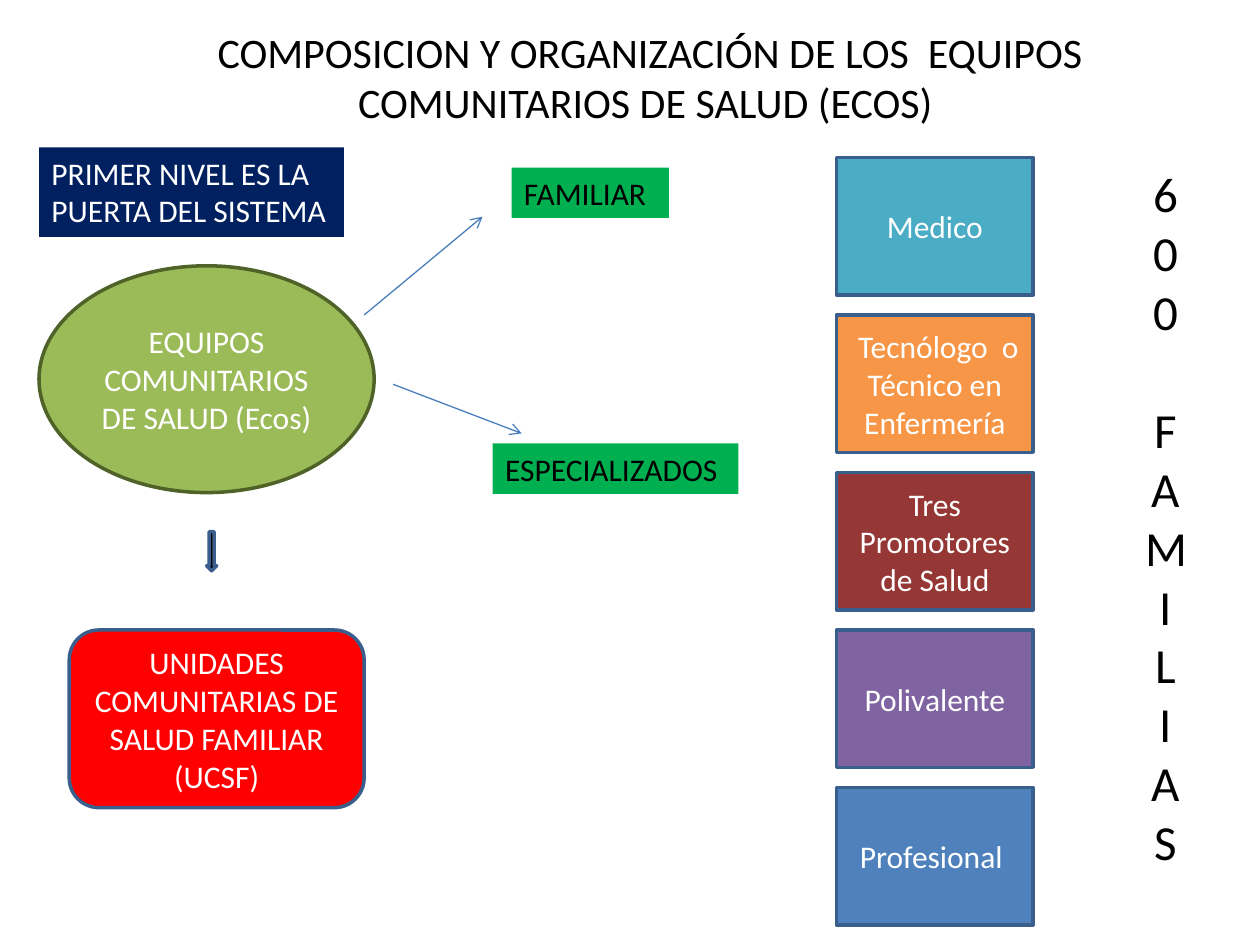
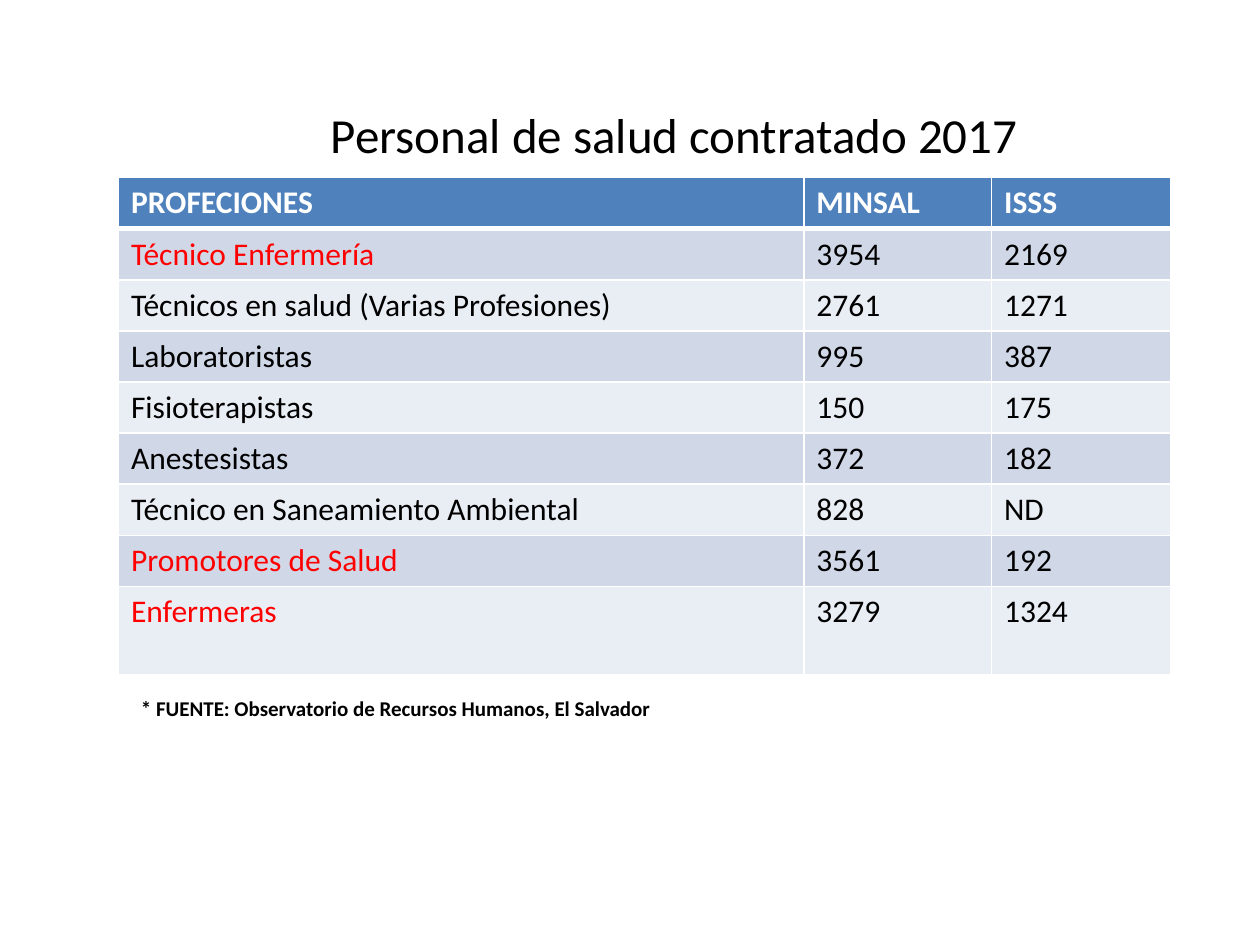
"""Build two slides on community health teams and contracted health staff."""
from dataclasses import dataclass
from typing import Any, NamedTuple, Optional

from lxml import etree
from pptx import Presentation
from pptx.dml.color import RGBColor
from pptx.enum.shapes import MSO_CONNECTOR, MSO_SHAPE
from pptx.enum.text import MSO_ANCHOR, MSO_AUTO_SIZE, PP_ALIGN
from pptx.oxml.ns import qn
from pptx.util import Inches, Pt

RECTANGLE = MSO_SHAPE.RECTANGLE
ELLIPSE = MSO_SHAPE.OVAL
ROUNDED = MSO_SHAPE.FLOWCHART_ALTERNATE_PROCESS
DOWN_ARROW = MSO_SHAPE.DOWN_ARROW
STRAIGHT = MSO_CONNECTOR.STRAIGHT
TOP, MIDDLE = MSO_ANCHOR.TOP, MSO_ANCHOR.MIDDLE
LEFT, CENTER = PP_ALIGN.LEFT, PP_ALIGN.CENTER
NO_AUTOFIT = MSO_AUTO_SIZE.NONE

FONT = "Calibri"
WHITE, BLACK, RED = "FFFFFF", "000000", "FF0000"
BLUE, OUTLINE, ARROW = "4F81BD", "3A5F8C", "4B7EBC"
GREEN, NAVY = "00B050", "002060"
OLIVE, DARK_OLIVE = "9BBB59", "4F6228"
BANDS = ("D0D8E8", "E9EDF4")
TITLE_ONLY = 5


class Area(NamedTuple):
    """Left, top, width and height in inches."""
    left: float
    top: float
    width: float
    height: float


@dataclass(frozen=True)
class TextStyle:
    """Look of the text in one element."""
    size: float = 18
    color: str = BLACK
    bold: bool = False
    align: Any = LEFT
    anchor: Any = TOP


@dataclass(frozen=True)
class Panel:
    """A filled and outlined shape with centred white text."""
    text: str
    area: Area
    fill: str
    shape: Any = RECTANGLE
    outline: str = OUTLINE


@dataclass(frozen=True)
class Label:
    """A text box, filled when a fill is given."""
    text: str
    area: Area
    style: TextStyle
    fill: Optional[str] = None


class Staff(NamedTuple):
    """One profession with its head counts."""
    profession: str
    minsal: str
    isss: str
    highlighted: bool = False


PANEL_TEXT = TextStyle(color=WHITE, align=CENTER, anchor=MIDDLE)
LABEL_TEXT = TextStyle()

PANELS = (
    Panel("EQUIPOS COMUNITARIOS DE SALUD (Ecos)", Area(0.31, 2.11, 2.66, 1.8), OLIVE, ELLIPSE, DARK_OLIVE),
    Panel("UNIDADES COMUNITARIAS DE SALUD FAMILIAR (UCSF)", Area(0.55, 5, 2.34, 1.41), RED, ROUNDED),
    Panel("", Area(1.64, 4.22, 0.08, 0.31), BLACK, DOWN_ARROW),
)
LABELS = (
    Label("FAMILIAR", Area(4.06, 1.33, 1.25, 0.4), LABEL_TEXT, GREEN),
    Label("ESPECIALIZADOS", Area(3.91, 3.52, 1.95, 0.4), LABEL_TEXT, GREEN),
    Label("PRIMER NIVEL ES LA PUERTA DEL SISTEMA", Area(0.31, 1.17, 2.42, 0.71), TextStyle(color=WHITE), NAVY),
)
TEAM_ARROWS = (((2.89, 2.5), (3.83, 1.72)), ((3.12, 3.05), (4.14, 3.44)))
TEAM_MEMBERS = (
    ("Medico", "4BACC6"),
    (" Tecnólogo  o Técnico en Enfermería", "F79646"),
    ("Tres Promotores de Salud", "953735"),
    ("Polivalente", "8064A2"),
    ("Profesional ", BLUE),
)
MEMBER_PITCH = 1.25
FAMILY_COUNT, FAMILY_WORD = "600", "FAMILIAS"

STAFF_HEADINGS = ("PROFECIONES", "MINSAL", "ISSS")
STAFF = (
    Staff("Técnico Enfermería", "3954", "2169", True),
    Staff("Técnicos en salud (Varias Profesiones)", "2761", "1271"),
    Staff("Laboratoristas", "995", "387"),
    Staff("Fisioterapistas", "150", "175"),
    Staff("Anestesistas", "372", "182"),
    Staff("Técnico en Saneamiento Ambiental", "828", "ND"),
    Staff("Promotores de Salud", "3561", "192", True),
    Staff("Enfermeras", "3279", "1324", True),
)
STAFF_AREA = Area(0.94, 1.41, 8.35, 3.94)
STAFF_COLUMNS = (5.44, 1.49, 1.42)
LAST_ROW_HEIGHT = 0.7


def rgb(color: str) -> RGBColor:
    """Turn a hex string into a colour."""
    return RGBColor.from_string(color)


def apply(target: Any, values: dict[str, Any]) -> None:
    """Set each named attribute on the target."""
    for name, value in values.items():
        setattr(target, name, value)


def inches(area: Area) -> list[int]:
    """Convert an area to lengths."""
    return [Inches(value) for value in area]


def paint(shape: Any, color: str) -> None:
    """Give a shape or cell a solid fill."""
    shape.fill.solid()
    shape.fill.fore_color.rgb = rgb(color)


def write(frame: Any, text: str, style: TextStyle) -> None:
    """Write lines of text into a frame in one style."""
    apply(frame, {"word_wrap": True, "vertical_anchor": style.anchor})
    frame.text = text
    for paragraph in frame.paragraphs:
        paragraph.alignment = style.align
        for run in paragraph.runs:
            apply(run.font, {"name": FONT, "size": Pt(style.size), "bold": style.bold})
            run.font.color.rgb = rgb(style.color)


def add_titled_slide(deck: Any, text: str, area: Area, size: float) -> Any:
    """Add a title-only slide with its title placed and styled."""
    slide = deck.slides.add_slide(deck.slide_layouts[TITLE_ONLY])
    title = slide.shapes.title
    apply(title, dict(zip(area._fields, inches(area))))
    write(title.text_frame, text, TextStyle(size=size, align=CENTER))
    title.text_frame.auto_size = NO_AUTOFIT
    return slide


def add_panel(slide: Any, panel: Panel) -> None:
    """Draw a panel."""
    shape = slide.shapes.add_shape(panel.shape, *inches(panel.area))
    shape.shadow.inherit = False
    paint(shape, panel.fill)
    shape.line.color.rgb = rgb(panel.outline)
    shape.line.width = Pt(2)
    write(shape.text_frame, panel.text, PANEL_TEXT)


def add_label(slide: Any, label: Label) -> Any:
    """Draw a label and return its text frame."""
    box = slide.shapes.add_textbox(*inches(label.area))
    if label.fill:
        paint(box, label.fill)
    write(box.text_frame, label.text, label.style)
    return box.text_frame


def add_arrow(slide: Any, start: tuple[float, float], end: tuple[float, float]) -> None:
    """Draw a thin line with an open arrowhead at its end."""
    ends = [Inches(value) for value in (*start, *end)]
    arrow = slide.shapes.add_connector(STRAIGHT, *ends)
    arrow.line.color.rgb = rgb(ARROW)
    arrow.line.width = Pt(0.75)
    properties = arrow.element.spPr
    etree.SubElement(properties.find(qn("a:ln")), qn("a:tailEnd"), type="arrow")
    etree.SubElement(properties, qn("a:effectLst"))


def add_borders(cell: Any, bottom: float) -> None:
    """Give a cell white borders with its own bottom width."""
    properties = cell._tc.get_or_add_tcPr()
    for side, width in {"L": 1, "R": 1, "T": 1, "B": bottom}.items():
        border = etree.SubElement(properties, qn(f"a:ln{side}"), w=str(Pt(width)))
        fill = etree.SubElement(border, qn("a:solidFill"))
        etree.SubElement(fill, qn("a:srgbClr"), val=WHITE)


def fill_cell(cell: Any, text: str, fill: str, style: TextStyle, bottom: float = 1) -> None:
    """Write and format one table cell."""
    add_borders(cell, bottom)
    paint(cell, fill)
    write(cell.text_frame, text, style)


def add_staff_table(slide: Any) -> None:
    """Draw the table of contracted staff."""
    row_count = len(STAFF) + 1
    frame = slide.shapes.add_table(row_count, len(STAFF_COLUMNS), *inches(STAFF_AREA))
    table = frame.table
    apply(table, {"first_row": False, "horz_banding": False})
    for column, width in zip(table.columns, STAFF_COLUMNS):
        column.width = Inches(width)
    row_height = (STAFF_AREA.height - LAST_ROW_HEIGHT) / len(STAFF)
    for row in table.rows:
        row.height = Inches(row_height)
    table.rows[row_count - 1].height = Inches(LAST_ROW_HEIGHT)
    for column, heading in enumerate(STAFF_HEADINGS):
        fill_cell(table.cell(0, column), heading, BLUE, TextStyle(color=WHITE, bold=True), 3)
    for index, staff in enumerate(STAFF):
        for column, text in enumerate(staff[:3]):
            color = RED if staff.highlighted and column == 0 else BLACK
            fill_cell(table.cell(index + 1, column), text, BANDS[index % 2], TextStyle(color=color))


def build_teams_slide(deck: Any) -> None:
    """Build the slide on how the teams are organised."""
    heading = "COMPOSICION Y ORGANIZACIÓN DE LOS  EQUIPOS COMUNITARIOS DE SALUD (ECOS) "
    slide = add_titled_slide(deck, heading, Area(0.55, 0.16, 9.22, 1.21), 24)
    for panel in PANELS:
        add_panel(slide, panel)
    for index, (member, color) in enumerate(TEAM_MEMBERS):
        area = Area(6.64, MEMBER_PITCH * (index + 1), 1.56, 1.09)
        add_panel(slide, Panel(member, area, color))
    for start, end in TEAM_ARROWS:
        add_arrow(slide, start, end)
    for label in LABELS:
        add_label(slide, label)
    letters = "\n".join(FAMILY_COUNT + FAMILY_WORD)
    style = TextStyle(size=28, align=CENTER)
    families = add_label(slide, Label(letters, Area(8.98, 1.25, 0.55, 5.76), style))
    families.paragraphs[len(FAMILY_COUNT)].space_before = Pt(34)


def build_staff_slide(deck: Any) -> None:
    """Build the slide on contracted staff."""
    slide = add_titled_slide(deck, "Personal de salud contratado 2017", Area(2.03, 0.78, 6.64, 0.57), 28)
    add_staff_table(slide)
    source = "* FUENTE: Observatorio de Recursos Humanos, El Salvador"
    add_label(slide, Label(source, Area(1.02, 5.47, 6.64, 0.3), TextStyle(size=12, bold=True)))


def main() -> None:
    """Build and save the presentation."""
    deck = Presentation()
    apply(deck, {"slide_width": Inches(10), "slide_height": Inches(7.5)})
    build_teams_slide(deck)
    build_staff_slide(deck)
    deck.save("out.pptx")


if __name__ == "__main__":
    main()
